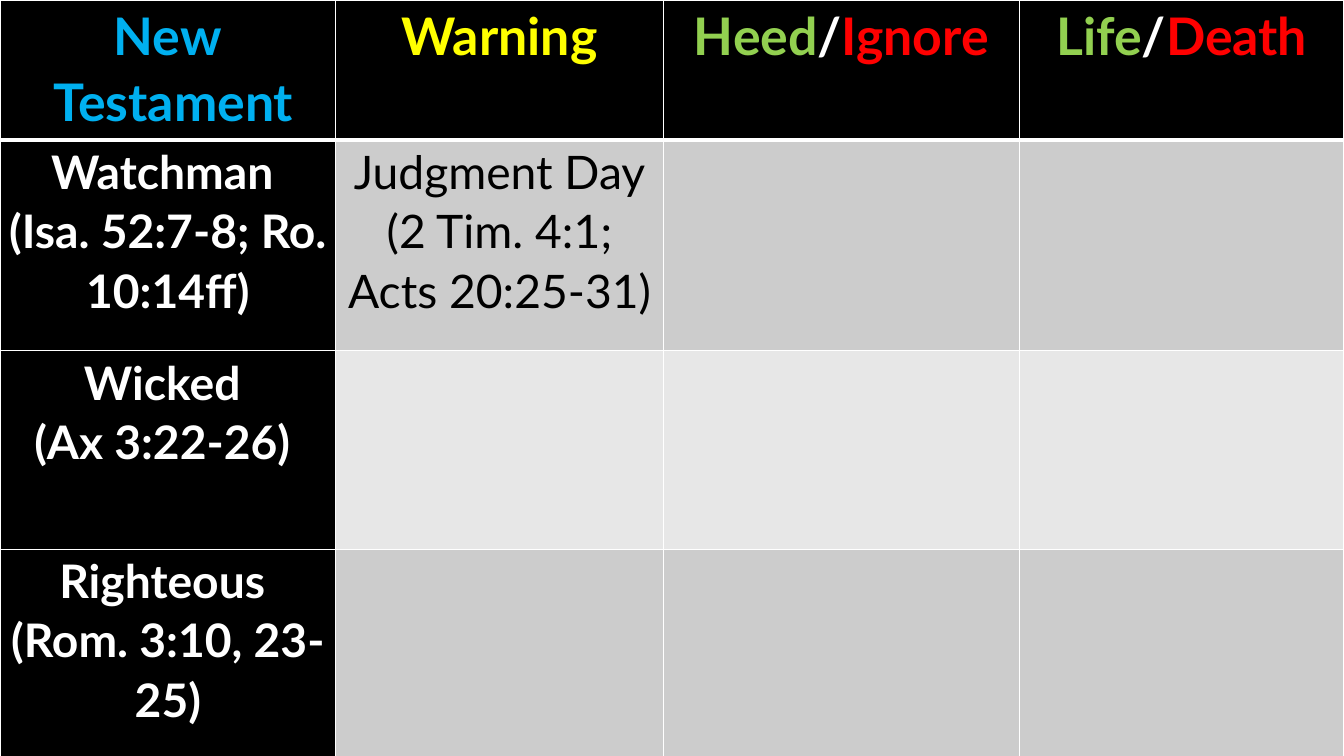
from dataclasses import dataclass

from lxml import etree
from pptx import Presentation
from pptx.dml.color import RGBColor
from pptx.enum.text import PP_ALIGN
from pptx.oxml.ns import qn
from pptx.util import Inches, Pt

CENTER = PP_ALIGN.CENTER
BLACK = RGBColor(0x00, 0x00, 0x00)
WHITE = RGBColor(0xFF, 0xFF, 0xFF)
BLUE = RGBColor(0x00, 0xB0, 0xF0)
YELLOW = RGBColor(0xFF, 0xFF, 0x00)
GREEN = RGBColor(0x92, 0xD0, 0x50)
RED = RGBColor(0xFF, 0x00, 0x00)
DARK = RGBColor(0xCC, 0xCC, 0xCC)
LIGHT = RGBColor(0xE7, 0xE7, 0xE7)

FONT = "Lato"
COLS = [3.33, 3.25, 3.53, 3.22]
ROWS = [1.39, 2.09, 1.97, 2.38]
THIN, THICK = 1, 3


@dataclass(frozen=True)
class Part:
    text: str
    color: RGBColor


@dataclass(frozen=True)
class Entry:
    lines: list[list[Part]]
    size: int = 33
    bold: bool = True


def plain(color: RGBColor, *lines: str) -> list[list[Part]]:
    """Give each line as a single part of one colour."""
    return [[Part(line, color)] for line in lines]


def choice(good: str, bad: str) -> list[list[Part]]:
    return [[Part(good, GREEN), Part("/", WHITE), Part(bad, RED)]]


HEADS = [
    plain(BLUE, "New", " Testament"),
    plain(YELLOW, "Warning"),
    choice("Heed", "Ignore"),
    choice("Life", "Death"),
]
LABELS = [
    plain(WHITE, "Watchman ", "(Isa. 52:7-8; Ro. 10:14ff)"),
    plain(WHITE, "Wicked ", "(Ax 3:22-26) "),
    plain(WHITE, "Righteous ", "(Rom. 3:10, 23-25)"),
]
JUDGMENT = plain(BLACK, "Judgment Day", "(2 Tim. 4:1; Acts 20:25-31)")

ENTRIES = {(0, col): Entry(lines, size=37) for col, lines in enumerate(HEADS)}
ENTRIES |= {(row, 0): Entry(lines) for row, lines in enumerate(LABELS, 1)}
ENTRIES[1, 1] = Entry(JUDGMENT, bold=False)


def add_edge(cell, side: str, width: int) -> None:
    props = cell._tc.get_or_add_tcPr()
    line = etree.SubElement(props, qn(f"a:ln{side}"), w=str(Pt(width)))
    fill = etree.SubElement(line, qn("a:solidFill"))
    etree.SubElement(fill, qn("a:srgbClr"), val=str(WHITE))


def style_cell(cell, row: int, col: int) -> None:
    widths = {
        "L": THIN,
        "R": THIN,
        "T": THICK if row == 1 else THIN,
        "B": THICK if row == 0 else THIN,
    }
    for side, width in widths.items():
        add_edge(cell, side, width)
    cell.fill.solid()
    band = DARK if row % 2 else LIGHT
    cell.fill.fore_color.rgb = BLACK if row == 0 or col == 0 else band


def write_cell(cell, entry: Entry) -> None:
    cell.margin_left = cell.margin_right = Inches(0.07)
    cell.margin_top = cell.margin_bottom = 0
    frame = cell.text_frame
    for index, parts in enumerate(entry.lines):
        para = frame.add_paragraph() if index else frame.paragraphs[0]
        para.alignment = CENTER
        para.line_spacing = 1.07
        para.font.name = FONT
        para.font.size = Pt(entry.size)
        para.font.bold = entry.bold
        for part in parts:
            run = para.add_run()
            run.text = part.text
            run.font.color.rgb = part.color


def main() -> None:
    deck = Presentation()
    deck.slide_width, deck.slide_height = Inches(13.33), Inches(7.5)
    slide = deck.slides.add_slide(deck.slide_layouts[6])
    table = slide.shapes.add_table(
        len(ROWS), len(COLS), 0, 0, Inches(sum(COLS)), Inches(sum(ROWS))
    ).table
    for column, width in zip(table.columns, COLS):
        column.width = Inches(width)
    for line, height in zip(table.rows, ROWS):
        line.height = Inches(height)
    for row in range(len(ROWS)):
        for col in range(len(COLS)):
            cell = table.cell(row, col)
            style_cell(cell, row, col)
            if (row, col) in ENTRIES:
                write_cell(cell, ENTRIES[row, col])
    deck.save("out.pptx")


if __name__ == "__main__":
    main()
